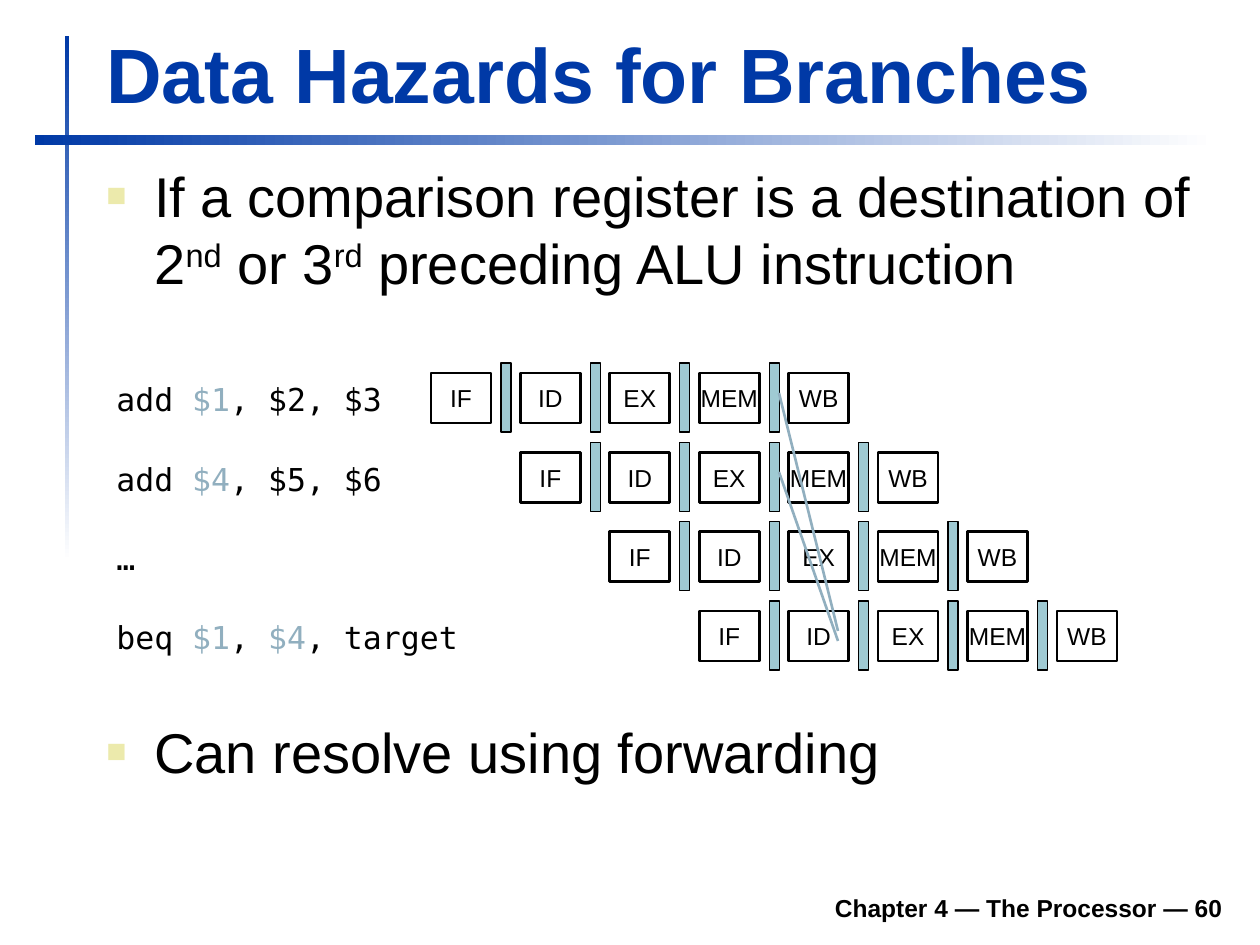
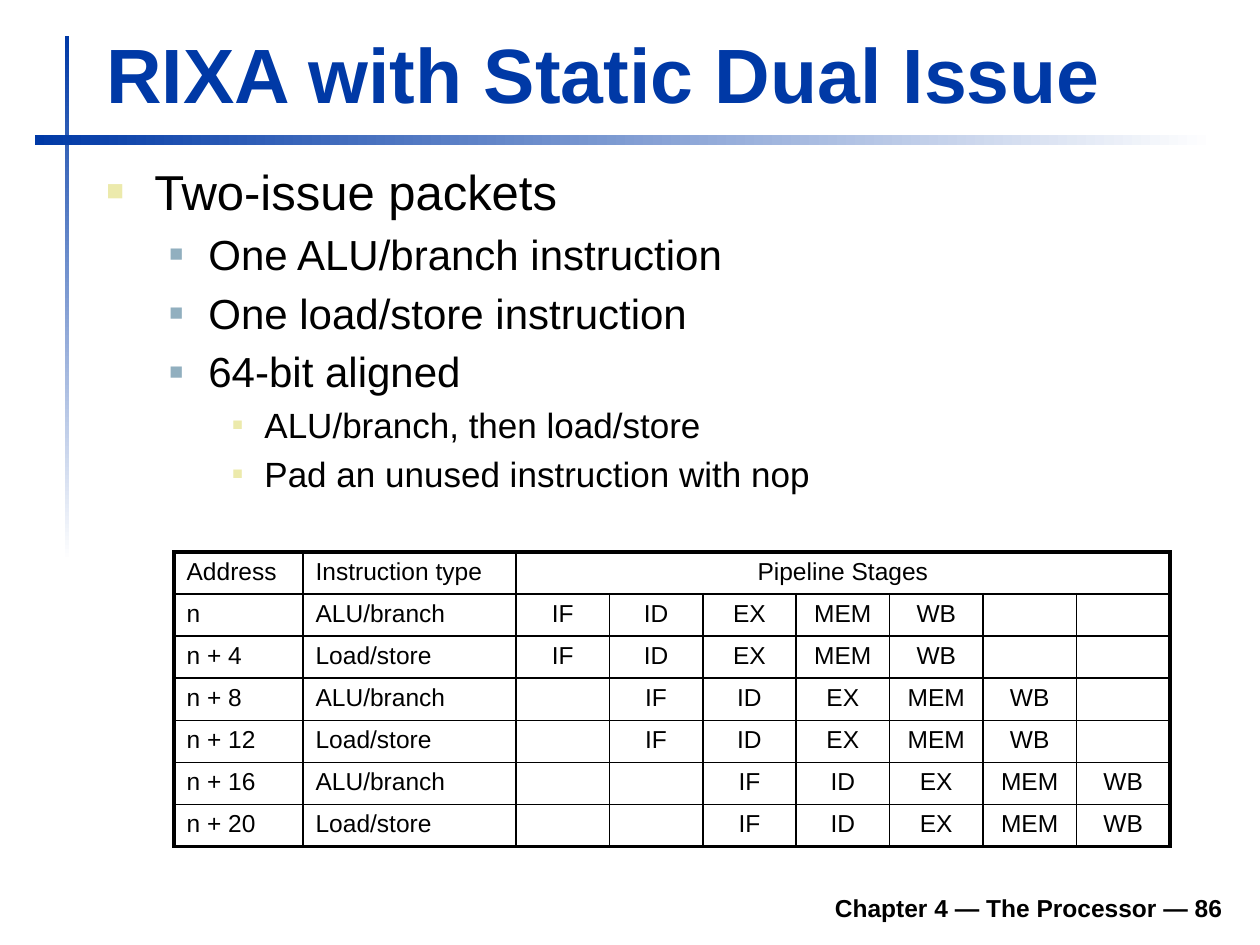
from lxml import etree
from pptx import Presentation
from pptx.dml.color import RGBColor
from pptx.enum.shapes import MSO_CONNECTOR, MSO_SHAPE
from pptx.enum.text import MSO_ANCHOR, PP_ALIGN
from pptx.oxml.ns import qn
from pptx.util import Emu, Pt

RECTANGLE = MSO_SHAPE.RECTANGLE
STRAIGHT = MSO_CONNECTOR.STRAIGHT
TOP, MIDDLE, BOTTOM = MSO_ANCHOR.TOP, MSO_ANCHOR.MIDDLE, MSO_ANCHOR.BOTTOM
LEFT, CENTER, RIGHT = PP_ALIGN.LEFT, PP_ALIGN.CENTER, PP_ALIGN.RIGHT

BLUE = RGBColor(0x00, 0x39, 0xA6)
WHITE = RGBColor(0xFF, 0xFF, 0xFF)
BLACK = RGBColor(0x00, 0x00, 0x00)
SAND = RGBColor(0xEC, 0xEA, 0xAC)
STEEL = RGBColor(0x91, 0xAF, 0xBF)
TEAL = RGBColor(0x9F, 0xCA, 0xD3)

EMU_PER_INCH = 914400
PX_PER_INCH = 126
SANS, MONO = "Arial", "DejaVu Sans Mono"
STAGES = ("IF", "ID", "EX", "MEM", "WB")

TITLE_FONT = {"name": SANS, "size": Pt(44), "bold": True}
FOOTER_FONT = {"name": SANS, "size": Pt(14), "bold": True}
SMALL_FONT = {"name": SANS, "size": Pt(14)}
CODE_FONT = {"name": MONO, "size": Pt(18)}

# Bullet levels: left margin and hanging indent in px, colour, size in percent
BULLET_LEVELS = (
    (48, 48, SAND, 60),
    (102, 39, STEEL, 55),
    (158, 32, SAND, 50),
)


def px(length):
    return Emu(round(length * EMU_PER_INCH / PX_PER_INCH))


def place(box):
    return [px(length) for length in box]


# ---- Text ----

def add_run(paragraph, text, font_format, color=BLACK):
    run = paragraph.add_run()
    run.text = text
    for name, value in font_format.items():
        setattr(run.font, name, value)
    run.font.color.rgb = color
    return run


def add_text_box(slide, box, anchor=TOP, wrap=True):
    frame = slide.shapes.add_textbox(*place(box)).text_frame
    frame.word_wrap = wrap
    frame.vertical_anchor = anchor
    return frame


def add_space_before(paragraph):
    properties = paragraph._p.get_or_add_pPr()
    space = etree.SubElement(properties, qn("a:spcBef"))
    etree.SubElement(space, qn("a:spcPct"), val="20000")
    return properties


def format_bullet(paragraph, level):
    margin, hanging, color, percent = BULLET_LEVELS[level]
    paragraph.level = level
    properties = add_space_before(paragraph)
    properties.set("marL", str(px(margin)))
    properties.set("indent", str(-px(hanging)))
    bullet_color = etree.SubElement(properties, qn("a:buClr"))
    etree.SubElement(bullet_color, qn("a:srgbClr"), val=str(color))
    etree.SubElement(properties, qn("a:buSzPct"), val=str(percent * 1000))
    etree.SubElement(properties, qn("a:buFont"), typeface=SANS)
    etree.SubElement(properties, qn("a:buChar"), char="■")


def add_bullets(slide, box, items):
    """Each item is (level, size, pieces); every second piece is superscript."""
    frame = add_text_box(slide, box)
    for index, (level, size, pieces) in enumerate(items):
        paragraph = frame.add_paragraph() if index else frame.paragraphs[0]
        format_bullet(paragraph, level)
        for position, text in enumerate(pieces):
            run = add_run(paragraph, text, {"name": SANS, "size": Pt(size)})
            if position % 2:
                run.font._element.set("baseline", "30000")


# ---- Shared slide frame ----

def add_gradient_bar(slide, box, angle):
    bar = slide.shapes.add_shape(RECTANGLE, *place(box))
    bar.shadow.inherit = False
    bar.line.fill.background()
    bar.fill.gradient()
    bar.fill.gradient_angle = angle
    for stop, color in zip(bar.fill.gradient_stops, (BLUE, WHITE)):
        stop.color.rgb = color


def add_framed_slide(presentation, title, number):
    slide = presentation.slides.add_slide(presentation.slide_layouts[6])
    add_gradient_bar(slide, (65, 36, 4, 525), 270)
    add_gradient_bar(slide, (35, 135, 1180, 10), 0)

    footer = add_text_box(slide, (233, 880, 1002, 49), BOTTOM).paragraphs[0]
    footer.alignment = RIGHT
    add_run(footer, f"Chapter 4 — The Processor — {number}", FOOTER_FONT)

    heading = add_text_box(slide, (94, 20, 1138, 105), BOTTOM).paragraphs[0]
    add_run(heading, title, TITLE_FONT, BLUE)
    return slide


# ---- Pipeline diagram ----

def add_block(group, box, line_width, fill=None, label=""):
    block = group.shapes.add_shape(RECTANGLE, *place(box))
    block.shadow.inherit = False
    block.line.color.rgb = BLACK
    block.line.width = Pt(line_width)
    if fill is None:
        block.fill.background()
    else:
        block.fill.solid()
        block.fill.fore_color.rgb = fill
    if label:
        frame = block.text_frame
        frame.word_wrap = False
        frame.vertical_anchor = MIDDLE
        frame.paragraphs[0].alignment = CENTER
        add_run(frame.paragraphs[0], label, SMALL_FONT)


def add_pipeline(slide, left, top, pitch):
    group = slide.shapes.add_group_shape()
    for step, stage in enumerate(STAGES):
        add_block(group, (left + step * pitch, top + 10, 60, 50), 1.5, label=stage)
    for step in range(len(STAGES) - 1):
        add_block(group, (left + step * pitch + 70, top, 10, 69), 0.75, fill=TEAL)


def add_code_line(slide, left, top, pieces):
    """Every second piece is a highlighted register."""
    width = 25 + 19 * sum(len(piece) for piece in pieces)
    paragraph = add_text_box(slide, (left, top, width, 50), wrap=False).paragraphs[0]
    for position, text in enumerate(pieces):
        add_run(paragraph, text, CODE_FONT, STEEL if position % 2 else BLACK)


def add_forwarding_line(slide, start, end):
    line = slide.shapes.add_connector(STRAIGHT, *place(start + end))
    line.line.color.rgb = STEEL
    line.line.width = Pt(1.5)
    etree.SubElement(line._element.spPr, qn("a:effectLst"))


def add_hazard_diagram(slide, box, code_lines):
    left, top, width, height = box
    pipelines_left = left + 327
    rows = len(code_lines)
    # The last stage of the last row ends at the right edge of the box
    column_pitch = (left + width - 60 - pipelines_left) / (rows + len(STAGES) - 2)
    row_pitch = (height - 69) / (rows - 1)
    for row, pieces in enumerate(code_lines):
        row_top = top + row * row_pitch
        add_code_line(slide, left, row_top + 11, pieces)
        add_pipeline(slide, pipelines_left + row * column_pitch, row_top, column_pitch)
    for start_y, end_y in ((30, 268), (109, 278)):
        add_forwarding_line(slide, (left + 675, top + start_y), (left + 734, top + end_y))


# ---- Issue table ----

def set_borders(cell, widths):
    properties = cell._tc.get_or_add_tcPr()
    for index, (side, width) in enumerate(widths.items()):
        border = etree.Element(qn(f"a:ln{side}"), w=str(Pt(width)))
        fill = etree.SubElement(border, qn("a:solidFill"))
        etree.SubElement(fill, qn("a:srgbClr"), val=str(BLACK))
        properties.insert(index, border)


def fill_cell(cell, text, alignment):
    cell.fill.background()
    paragraph = cell.text_frame.paragraphs[0]
    paragraph.alignment = alignment
    add_space_before(paragraph)
    if text:
        add_run(paragraph, text, SMALL_FONT)
    else:
        # Keeps empty cells as low as the filled ones
        ending = etree.SubElement(paragraph._p, qn("a:endParaRPr"), sz="1400")
        etree.SubElement(ending, qn("a:latin"), typeface=SANS)


def add_issue_table(slide, box, rows, label_widths):
    row_count, column_count = len(rows), len(rows[0])
    table = slide.shapes.add_table(row_count, column_count, *place(box)).table
    table.first_row = table.horz_banding = False
    label_count = len(label_widths)
    stage_width = (box[2] - sum(label_widths)) / (column_count - label_count)
    for index, column in enumerate(table.columns):
        column.width = px(label_widths[index] if index < label_count else stage_width)
    for row in table.rows:
        row.height = px(box[3] / row_count)
    table.cell(0, label_count).merge(table.cell(0, column_count - 1))

    for row, texts in enumerate(rows):
        for column, text in enumerate(texts):
            cell = table.cell(row, column)
            fill_cell(cell, text, LEFT if column < label_count else CENTER)
            last = column + cell.span_width == column_count
            set_borders(cell, {
                "L": 2.25 if column == 0 else 1,
                "R": 2.25 if last else 1,
                "T": {0: 2.25, 1: 1.5}.get(row, 1),
                "B": {0: 1.5, row_count - 1: 2.25}.get(row, 1),
            })


# ---- Slides ----

def build_hazard_slide(presentation):
    slide = add_framed_slide(presentation, "Data Hazards for Branches", 60)
    add_bullets(slide, (94, 155, 1140, 169), [
        (0, 32, ("If a comparison register is a destination of 2", "nd",
                 " or 3", "rd", " preceding ALU instruction")),
    ])
    add_hazard_diagram(slide, (104, 363, 1013, 307), (
        ("add ", "$1", ", $2, $3"),
        ("add ", "$4", ", $5, $6"),
        ("…",),
        ("beq ", "$1", ", ", "$4", ", target"),
    ))
    add_bullets(slide, (94, 711, 1071, 89), [(0, 32, ("Can resolve using forwarding",))])


def build_dual_issue_slide(presentation):
    slide = add_framed_slide(presentation, "RIXA with Static Dual Issue", 86)
    add_bullets(slide, (94, 155, 1140, 381), [
        (0, 28, ("Two-issue packets",)),
        (1, 24, ("One ALU/branch instruction",)),
        (1, 24, ("One load/store instruction",)),
        (1, 24, ("64-bit aligned",)),
        (2, 20, ("ALU/branch, then load/store",)),
        (2, 20, ("Pad an unused instruction with nop",)),
    ])
    rows = [["Address", "Instruction type", "Pipeline Stages"] + [""] * 6]
    for index in range(6):
        packet = index // 2
        address = f"n + {4 * index}" if index else "n"
        kind = "Load/store" if index % 2 else "ALU/branch"
        rows.append([address, kind] + [""] * packet + list(STAGES) + [""] * (2 - packet))
    add_issue_table(slide, (174, 552, 996, 259), rows, (129, 213))


def main():
    presentation = Presentation()
    presentation.slide_width = px(1260)
    presentation.slide_height = px(945)
    build_hazard_slide(presentation)
    build_dual_issue_slide(presentation)
    presentation.save("out.pptx")


if __name__ == "__main__":
    main()
